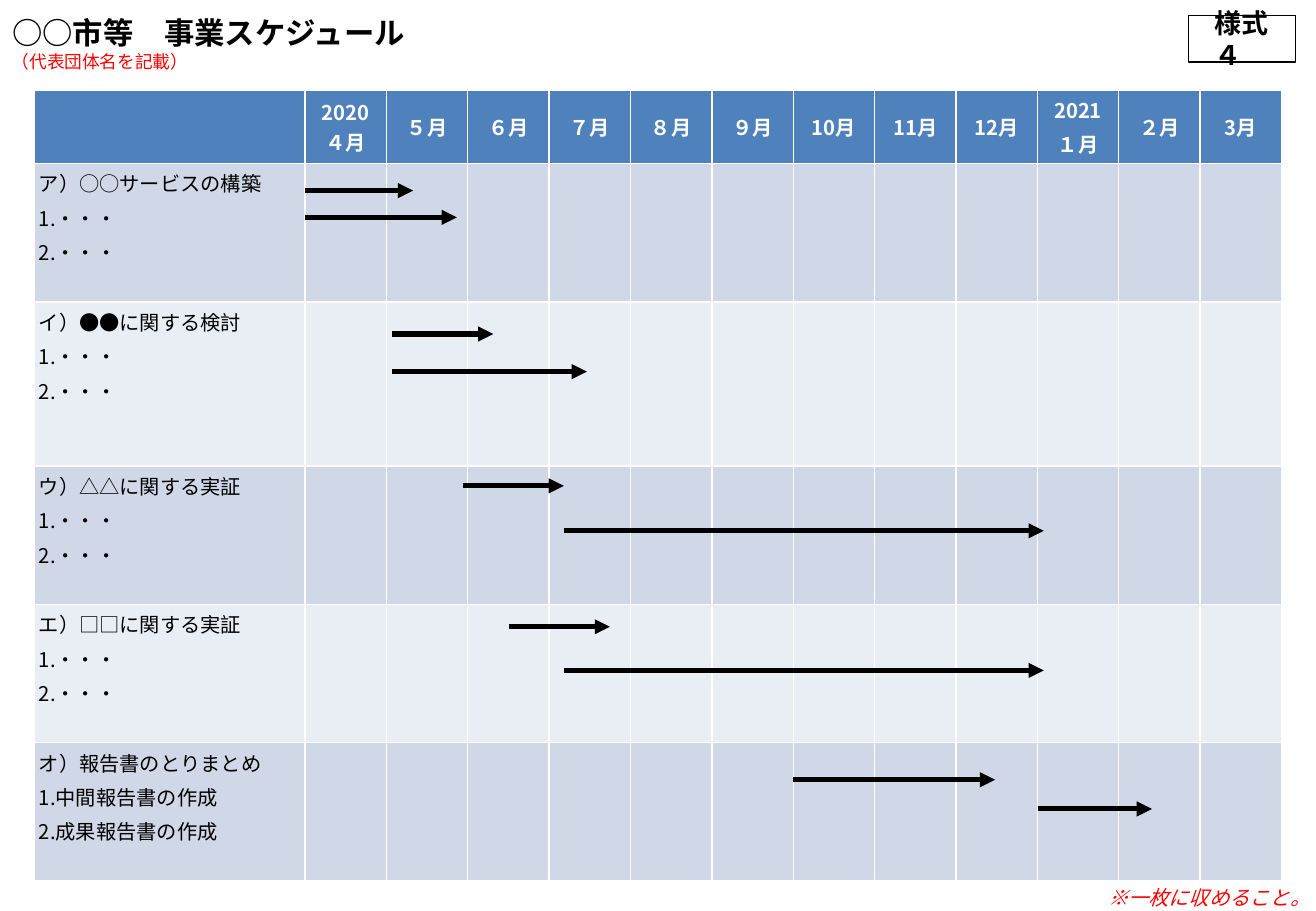
from lxml import etree
from pptx import Presentation
from pptx.dml.color import RGBColor
from pptx.enum.shapes import MSO_CONNECTOR, MSO_SHAPE
from pptx.enum.text import MSO_ANCHOR, MSO_AUTO_SIZE, PP_ALIGN
from pptx.oxml.ns import qn
from pptx.util import Inches, Pt

LEFT, CENTER = PP_ALIGN.LEFT, PP_ALIGN.CENTER
TOP, MIDDLE = MSO_ANCHOR.TOP, MSO_ANCHOR.MIDDLE
NO_FIT = MSO_AUTO_SIZE.NONE
RECT = MSO_SHAPE.RECTANGLE
LINE = MSO_CONNECTOR.STRAIGHT
SANS = "Noto Sans CJK JP"

HEADS = ["", "2020\n４月", "５月", "６月", "７月", "８月", "９月",
         "10月", "11月", "12月", ["2021", "１月"], "２月", "3月"]
STEPS = ["1.・・・", "2.・・・"]
TASKS = [
    ["ア）○○サービスの構築", *STEPS],
    ["イ）●●に関する検討", *STEPS],
    ["ウ）△△に関する実証", *STEPS],
    ["エ）□□に関する実証", *STEPS],
    ["オ）報告書のとりまとめ", "1.中間報告書の作成", "2.成果報告書の作成"],
]
WIDTHS = [2.23] + [0.67] * 12
HEIGHTS = [0.53, 1.14, 1.35, 1.14, 1.14, 1.14]
BANDS = ["D0D8E8", "E9EDF4"]
SPANS = [
    (2.51, 3.4, 1.57), (2.51, 3.76, 1.79),
    (3.23, 4.06, 2.75), (3.23, 4.83, 3.06),
    (3.81, 4.64, 4), (4.64, 8.59, 4.37),
    (4.19, 5.02, 5.16), (4.64, 8.59, 5.52),
    (6.53, 8.19, 6.42), (8.54, 9.48, 6.66),
]


def color(code):
    """Turn a hex string into a colour."""
    return RGBColor.from_string(code)


def assign(target, values):
    """Set each named value on the target."""
    for name, value in values.items():
        setattr(target, name, value)


def write(frame, lines, size, code, align=LEFT, gap=0, face=SANS, **look):
    """Fill a text frame with one paragraph per line."""
    font = {"size": Pt(size), "name": face, **look}
    for i, line in enumerate(lines):
        para = frame.paragraphs[0] if i == 0 else frame.add_paragraph()
        assign(para, {"text": line, "alignment": align, "space_before": Pt(gap)})
        for run in para.runs:
            assign(run.font, font)
            run.font.color.rgb = color(code)
            etree.SubElement(run.font._element, qn("a:ea"), typeface=SANS)
        for brk in para._p.findall(qn("a:br")):
            etree.SubElement(brk, qn("a:rPr"), sz=str(size * 100))


def place(shape, left, top, width, height):
    """Put a shape at a spot given in inches."""
    spot = {"left": left, "top": top, "width": width, "height": height}
    assign(shape, {name: Inches(value) for name, value in spot.items()})


def add_title(slide):
    """Move and fill the title."""
    title = slide.shapes.title
    place(title, 0, 0.06, 10.83, 0.41)
    assign(title.text_frame, {"vertical_anchor": MIDDLE, "auto_size": NO_FIT})
    write(title.text_frame, ["○○市等　事業スケジュール"], 18, "000000", bold=True)


def add_note(slide, text, spot, wrap, size, **look):
    """Add a red note."""
    box = slide.shapes.add_textbox(*map(Inches, spot))
    box.text_frame.word_wrap = wrap
    write(box.text_frame, [text], size, "FF0000", **look)


def add_label(slide):
    """Add the framed form number."""
    box = slide.shapes.add_shape(RECT, *map(Inches, (9.78, 0.13, 0.88, 0.38)))
    box.shadow.inherit = False
    box.fill.solid()
    box.fill.fore_color.rgb = color("FFFFFF")
    box.line.color.rgb = color("000000")
    box.line.width = Pt(0.75)
    assign(box.text_frame, {"margin_left": 0, "margin_right": 0,
                            "vertical_anchor": MIDDLE, "word_wrap": True})
    write(box.text_frame, ["様式４　"], 16, "000000", CENTER, bold=True)


def fill_cell(cell, lines, back, anchor, **look):
    """Paint a table cell and write its lines."""
    cell.fill.solid()
    cell.fill.fore_color.rgb = color(back)
    sides = ("left", "right", "top", "bottom")
    assign(cell, {f"margin_{side}": Inches(0.04) for side in sides})
    cell.vertical_anchor = anchor
    write(cell.text_frame, lines, 12, gap=3, **look)


def add_plan(slide):
    """Add the month table with its tasks."""
    spot = map(Inches, (0.28, 0.74, sum(WIDTHS), sum(HEIGHTS)))
    table = slide.shapes.add_table(len(HEIGHTS), len(WIDTHS), *spot).table
    for col, width in zip(table.columns, WIDTHS):
        col.width = Inches(width)
    for row, height in zip(table.rows, HEIGHTS):
        row.height = Inches(height)
    for c, head in enumerate(HEADS):
        lines = head if isinstance(head, list) else [head]
        fill_cell(table.cell(0, c), lines, "4F81BD", MIDDLE,
                  code="FFFFFF", align=CENTER, bold=True)
        for r, task in enumerate(TASKS):
            fill_cell(table.cell(r + 1, c), [] if c else task, BANDS[r % 2],
                      TOP, code="000000", bold=False)


def add_arrow(slide, start, end, top):
    """Add a level arrow for a time span."""
    arrow = slide.shapes.add_connector(LINE, *map(Inches, (start, top, end, top)))
    arrow.line.color.rgb = color("000000")
    arrow.line.width = Pt(3)
    etree.SubElement(arrow.line._get_or_add_ln(), qn("a:tailEnd"), type="triangle")
    etree.SubElement(arrow._element.spPr, qn("a:effectLst"))


def main():
    """Build and save the schedule slide."""
    deck = Presentation()
    assign(deck, {"slide_width": Inches(10.83), "slide_height": Inches(7.5)})
    slide = deck.slides.add_slide(deck.slide_layouts[5])
    add_label(slide)
    add_plan(slide)
    for span in SPANS:
        add_arrow(slide, *span)
    add_title(slide)
    add_note(slide, "※一枚に収めること。", (9.02, 7.24, 1.81, 0.3), True, 12,
             face="Calibri", italic=True)
    add_note(slide, "（代表団体名を記載）", (0, 0.37, 1.67, 0.28), False, 10.5)
    deck.save("out.pptx")


if __name__ == "__main__":
    main()
